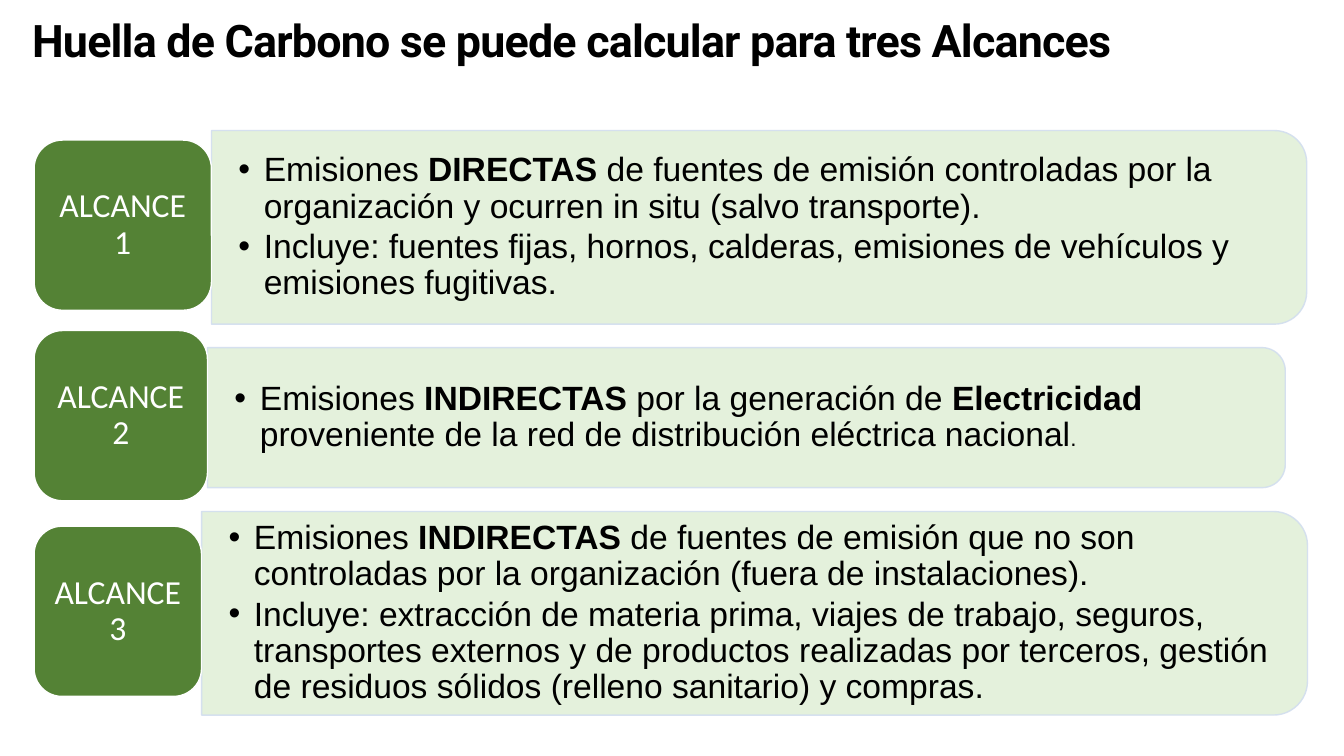
import pptx
import pptx.util
from pptx.dml.color import RGBColor
from pptx.enum.shapes import MSO_SHAPE
from pptx.enum.text import MSO_ANCHOR, MSO_AUTO_SIZE, PP_ALIGN
from pptx.oxml.ns import qn
from pptx.util import Cm, Pt
from lxml import etree

# Content: each run is (text, format changes)
TITLE = "Huella de Carbono se puede calcular para tres Alcances"
BOLD = {"bold": True}
SCOPES = [
    ("ALCANCE 1", [
        [("Emisiones ", {}), ("DIRECTAS ", BOLD),
         ("de fuentes de emisión controladas por la organización y ocurren "
          "in situ (salvo transporte).", {})],
        [("Incluye: fuentes fijas, hornos, calderas, emisiones de vehículos "
          "y emisiones fugitivas.", {})],
    ]),
    ("ALCANCE 2", [
        [("Emisiones ", {}), ("INDIRECTAS ", BOLD),
         ("por la generación de ", {}), ("Electricidad ", BOLD),
         ("proveniente de la red de distribución eléctrica nacional", {}),
         (".", {"size": Pt(16)})],
    ]),
    ("ALCANCE 3", [
        [("Emisiones ", {}), ("INDIRECTAS ", BOLD),
         ("de fuentes de emisión que no son controladas por la organización "
          "(fuera de instalaciones).", {})],
        [("Incluye: extracción de materia prima, viajes de trabajo, seguros, "
          "transportes externos y de productos realizadas por terceros, "
          "gestión de residuos sólidos (relleno sanitario) y compras.", {})],
    ]),
]

# Sizes in cm: label top, label width, panel top, panel height, panel right
LAYOUT = [
    (3.53, 4.47, 3.29, 4.88, 32.93),
    (8.33, 4.37, 8.76, 3.53, 32.39),
    (13.26, 4.22, 12.89, 5.13, 32.95),
]
LABEL_LEFT, LABEL_HEIGHT = 0.86, 4.29
TEXT_GAP = 0.25
BULLET_INDENT = Cm(0.64)

# Colours and formats
BLACK = RGBColor(0, 0, 0)
WHITE = RGBColor(255, 255, 255)
DARK_GREEN = RGBColor(0x54, 0x82, 0x35)
PALE_GREEN = RGBColor(0xE2, 0xF0, 0xD9)
PALE_BLUE = RGBColor(0xD2, 0xDE, 0xEF)
TITLE_FONT = {"name": "Roboto", "size": Pt(32), "bold": True}
LABEL_FONT = {"name": "Calibri", "size": Pt(24)}
BODY_FONT = {"name": "Arial", "size": Pt(24)}
TITLE_FRAME = {"word_wrap": True, "vertical_anchor": MSO_ANCHOR.MIDDLE,
               "auto_size": MSO_AUTO_SIZE.SHAPE_TO_FIT_TEXT}
LABEL_FRAME = {"word_wrap": True, "vertical_anchor": MSO_ANCHOR.MIDDLE}
BODY_FRAME = {**LABEL_FRAME, "margin_left": Cm(0.68), "margin_right": Cm(0.68),
              "margin_top": Cm(0.34), "margin_bottom": Cm(0.34)}


def apply_format(target, values):
    for name, value in values.items():
        setattr(target, name, value)


def add_run(paragraph, text, color, values):
    run = paragraph.add_run()
    run.text = text
    apply_format(run.font, values)
    run.font.color.rgb = color
    return run


def add_block(kind, left, top, width, height, fill, line, alpha=100):
    shape = slide.shapes.add_shape(kind, Cm(left), Cm(top), Cm(width), Cm(height))
    shape.shadow.inherit = False
    shape.fill.solid()
    shape.fill.fore_color.rgb = fill
    shape.line.color.rgb = line
    shape.line.width = Pt(1)
    if alpha < 100:
        for color in shape._element.spPr.iter(qn("a:srgbClr")):
            etree.SubElement(color, qn("a:alpha"), val=str(alpha * 1000))
    return shape


def add_text(left, top, width, height, frame_format):
    box = slide.shapes.add_textbox(Cm(left), Cm(top), Cm(width), Cm(height))
    apply_format(box.text_frame, frame_format)
    return box.text_frame


def add_bullet(paragraph):
    properties = paragraph._p.get_or_add_pPr()
    properties.set("marL", str(BULLET_INDENT))
    properties.set("indent", str(-BULLET_INDENT))
    etree.SubElement(properties, qn("a:buFont"), typeface="Arial")
    etree.SubElement(properties, qn("a:buChar"), char="•")


presentation = pptx.Presentation()
presentation.slide_width, presentation.slide_height = Cm(33.87), Cm(19.05)
slide = presentation.slides.add_slide(presentation.slide_layouts[6])

# Scopes: a pale panel with its text, and a label on its left
for (label_text, points), sizes in zip(SCOPES, LAYOUT):
    label_top, label_width, top, height, right = sizes
    left = LABEL_LEFT + label_width
    width = right - left

    # The panel is turned so that its rounded side faces right
    panel = add_block(MSO_SHAPE.ROUND_2_SAME_RECTANGLE,
                      left + (width - height) / 2, top + (height - width) / 2,
                      height, width, PALE_GREEN, PALE_BLUE, 90)
    panel.rotation = 90

    frame = add_text(left, top + TEXT_GAP, width - TEXT_GAP,
                     height - 2 * TEXT_GAP, BODY_FRAME)
    for index, runs in enumerate(points):
        paragraph = frame.add_paragraph() if index else frame.paragraphs[0]
        add_bullet(paragraph)
        paragraph.line_spacing = 0.9
        if index:
            paragraph.space_before = Pt(3)
        for text, changes in runs:
            add_run(paragraph, text, BLACK, {**BODY_FONT, **changes})

    label = add_block(MSO_SHAPE.ROUNDED_RECTANGLE, LABEL_LEFT, label_top,
                      label_width, LABEL_HEIGHT, DARK_GREEN, WHITE)
    apply_format(label.text_frame, LABEL_FRAME)
    paragraph = label.text_frame.paragraphs[0]
    apply_format(paragraph, {"alignment": PP_ALIGN.CENTER, "line_spacing": 0.9})
    add_run(paragraph, label_text, WHITE, LABEL_FONT)

# Title
paragraph = add_text(0.56, 0.33, 32.39, 1.5, TITLE_FRAME).paragraphs[0]
paragraph.line_spacing = 0.9
title_run = add_run(paragraph, TITLE, BLACK, TITLE_FONT)
title_run.font._element.set("spc", "-60")

presentation.save("out.pptx")
